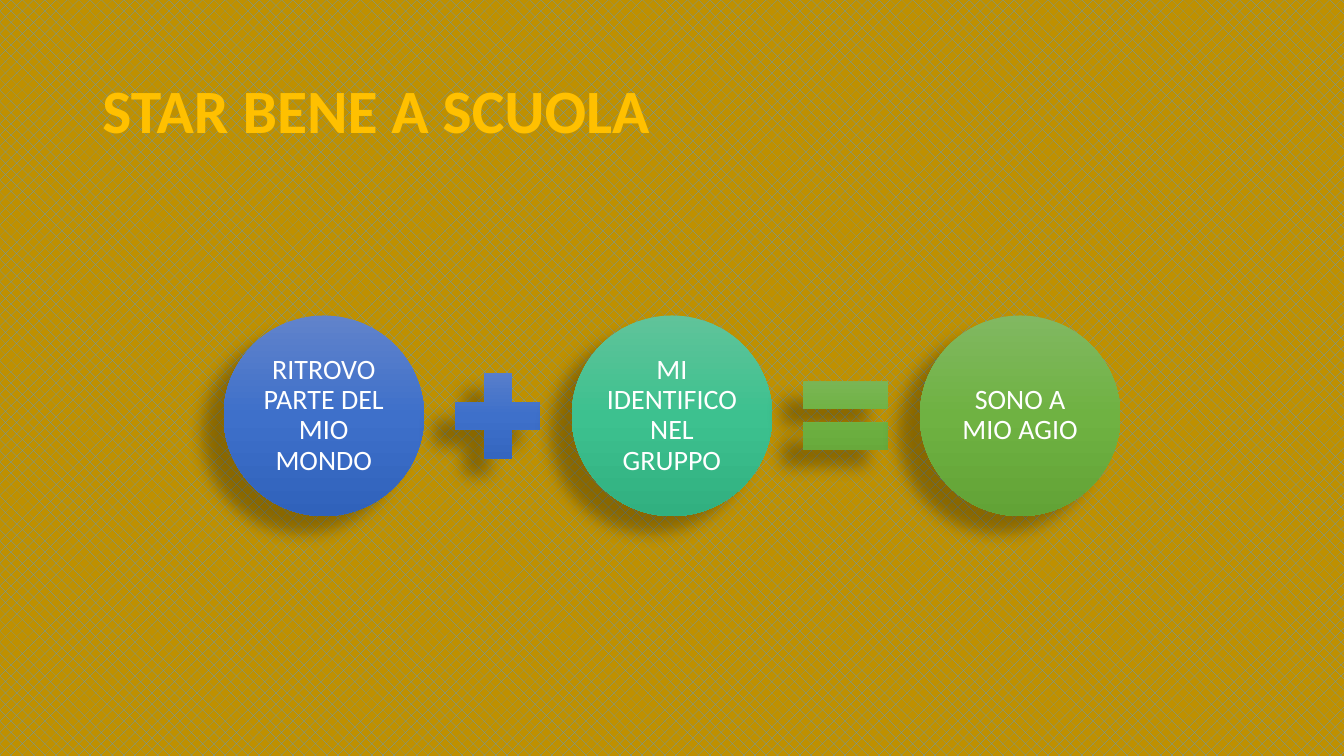
import copy

import pptx
import pptx.dml.color
import pptx.enum.dml
import pptx.enum.shapes
import pptx.enum.text
import pptx.oxml
import pptx.oxml.ns
import pptx.util

Pt = pptx.util.Pt
RGBColor = pptx.dml.color.RGBColor
SHAPE = pptx.enum.shapes.MSO_SHAPE
ALIGN = pptx.enum.text.PP_ALIGN
MIDDLE = pptx.enum.text.MSO_ANCHOR.MIDDLE

GOLD = RGBColor(0xFF, 0xC0, 0x00)
DARK_GOLD = RGBColor(0xBF, 0x90, 0x00)
SKY = RGBColor(0x5B, 0x9B, 0xD5)
WHITE = RGBColor(0xFF, 0xFF, 0xFF)
BLUES = [RGBColor(0x61, 0x83, 0xCB), RGBColor(0x3E, 0x70, 0xCA), RGBColor(0x30, 0x62, 0xBB)]
TEALS = [RGBColor(0x60, 0xC3, 0x9A), RGBColor(0x3D, 0xC1, 0x8F), RGBColor(0x31, 0xB0, 0x80)]
GREENS = [RGBColor(0x81, 0xB8, 0x61), RGBColor(0x6F, 0xB2, 0x42), RGBColor(0x62, 0xA3, 0x36)]

SHADOW = (
    f'<a:outerShdw {pptx.oxml.ns.nsdecls("a")} blurRad="{Pt(11.8)}" dist="{Pt(19.7)}" '
    f'dir="{141 * 60000}" algn="ctr" rotWithShape="0">'
    '<a:srgbClr val="000000"><a:alpha val="28000"/></a:srgbClr></a:outerShdw>'
)


def add_shaded_shape(kind, center_x, size, shades):
    """Add a square-framed shape on the equation's axis, with gradient and shadow."""
    shape = slide.shapes.add_shape(
        kind, Pt(center_x - size / 2), Pt(AXIS_Y - size / 2), Pt(size), Pt(size))
    shape.line.fill.background()
    shape.fill.gradient()
    shape.fill.gradient_angle = 270
    stops = shape.element.spPr.find(".//" + pptx.oxml.ns.qn("a:gsLst"))
    stops.insert(1, copy.deepcopy(stops[0]))
    for stop, shade, position in zip(shape.fill.gradient_stops, shades, (0, 0.5, 1)):
        stop.color.rgb = shade
        stop.position = position
    shape.shadow.inherit = False
    effects = shape.element.spPr.find(pptx.oxml.ns.qn("a:effectLst"))
    effects.append(pptx.oxml.parse_xml(SHADOW))
    return shape


def write_text(shape, text, alignment, color, font_format):
    frame = shape.text_frame
    frame.text = text
    frame.word_wrap = True
    frame.vertical_anchor = MIDDLE
    paragraph = frame.paragraphs[0]
    paragraph.alignment = alignment
    paragraph.line_spacing = 0.9
    font = paragraph.runs[0].font
    font.color.rgb = color
    for name, value in font_format.items():
        setattr(font, name, value)


presentation = pptx.Presentation()
presentation.slide_width = Pt(960)
presentation.slide_height = Pt(540)
slide = presentation.slides.add_slide(presentation.slide_layouts[5])

background = slide.background.fill
background.patterned()
background.pattern = pptx.enum.dml.MSO_PATTERN.PERCENT_25
background.fore_color.rgb = SKY
background.back_color.rgb = DARK_GOLD

title = slide.shapes.title
title_place = {"left": Pt(66), "top": Pt(28.8), "width": Pt(828), "height": Pt(104.4)}
for name, value in title_place.items():
    setattr(title, name, value)
write_text(title, "STAR BENE A SCUOLA", ALIGN.LEFT, GOLD,
           {"name": "Calibri", "size": Pt(44), "bold": True})

AXIS_Y = 297
CIRCLE_SIZE = 143.3
SIGN_SIZE = 83
PITCH = 248.7
FIRST_X = 480 - PITCH
INSETS = ("margin_left", "margin_top", "margin_right", "margin_bottom")

# Each term of the equation: its words, its shades and the sign that follows
terms = [
    ("RITROVO PARTE DEL MIO MONDO", BLUES, SHAPE.MATH_PLUS, BLUES),
    ("MI IDENTIFICO NEL GRUPPO", TEALS, SHAPE.MATH_EQUAL, GREENS),
    ("SONO A MIO AGIO", GREENS, None, None),
]
for index, (words, shades, sign, sign_shades) in enumerate(terms):
    center_x = FIRST_X + index * PITCH
    circle = add_shaded_shape(SHAPE.OVAL, center_x, CIRCLE_SIZE, shades)
    for inset in INSETS:
        setattr(circle.text_frame, inset, Pt(2))
    write_text(circle, words, ALIGN.CENTER, WHITE, {"name": "Calibri", "size": Pt(20)})
    if sign is not None:
        add_shaded_shape(sign, center_x + PITCH / 2, SIGN_SIZE, sign_shades)

presentation.save("out.pptx")
